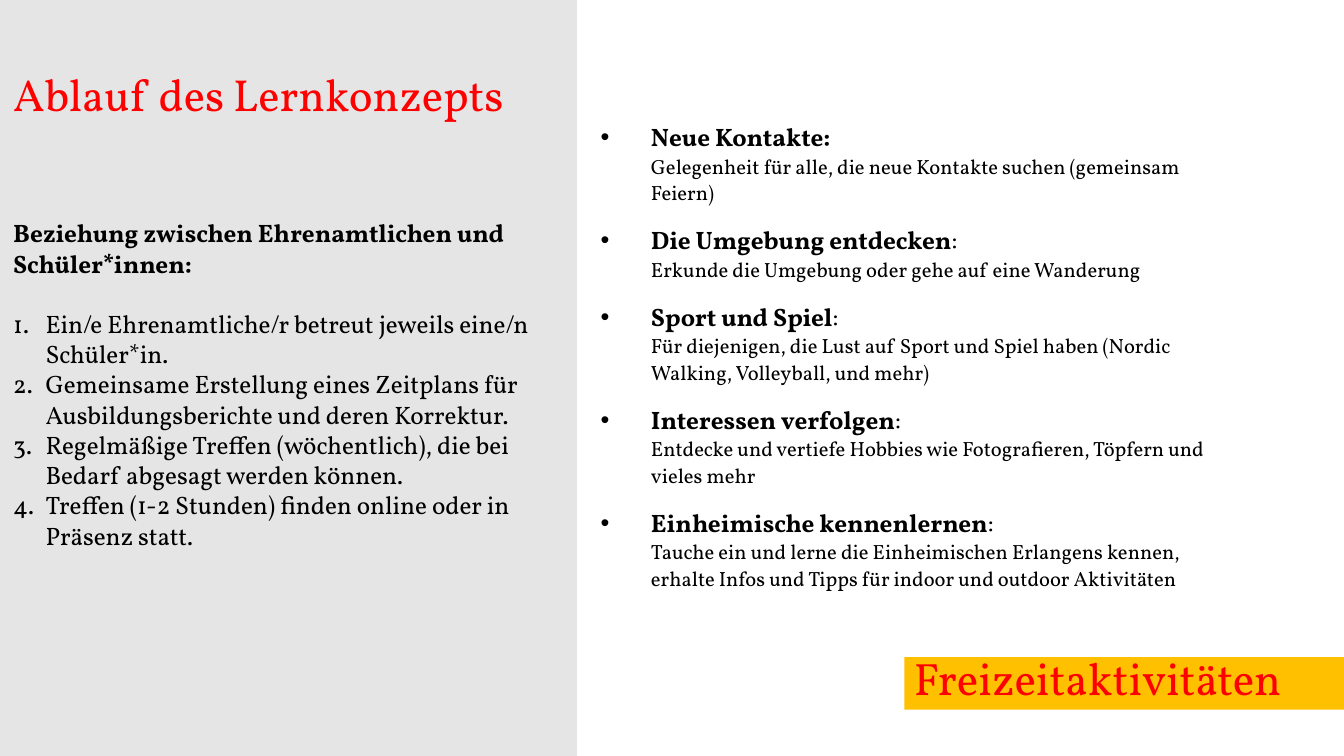
from lxml import etree
from pptx import Presentation
from pptx.dml.color import RGBColor
from pptx.enum.shapes import MSO_SHAPE as Shape
from pptx.enum.text import MSO_ANCHOR as Anchor, MSO_AUTO_SIZE as AutoSize, PP_ALIGN as Align
from pptx.oxml.ns import qn
from pptx.util import Inches, Pt

COLORS = {"panel": "E5E5E5", "banner": "FFC000", "heading": "FF0000", "body": "000000"}
FONT = "Vollkorn"
SLIDE_WIDTH = 10
SLIDE_HEIGHT = SLIDE_WIDTH * 9 / 16

CONCEPT_TITLE = "Ablauf des Lernkonzepts"
RELATION_TITLE = "Beziehung zwischen Ehrenamtlichen und Schüler*innen:"
RELATION_STEPS = [
    "Ein/e Ehrenamtliche/r betreut jeweils eine/n Schüler*in.",
    "Gemeinsame Erstellung eines Zeitplans für Ausbildungsberichte und deren Korrektur.",
    "Regelmäßige Treffen (wöchentlich), die bei Bedarf abgesagt werden können.",
    "Treffen (1-2 Stunden) finden online oder in Präsenz statt.",
]
LEISURE_TITLE = "Freizeitaktivitäten"
# bold heading, regular ending of the heading, description
ACTIVITIES = [
    ("Neue Kontakte:", "",
     "Gelegenheit für alle, die neue Kontakte suchen (gemeinsam Feiern)"),
    ("Die Umgebung entdecken", ":",
     "Erkunde die Umgebung oder gehe auf eine Wanderung"),
    ("Sport und Spiel", ":",
     "Für diejenigen, die Lust auf Sport und Spiel haben "
     "(Nordic Walking, Volleyball, und mehr)"),
    ("Interessen verfolgen", ":",
     "Entdecke und vertiefe Hobbies wie Fotografieren, Töpfern und vieles mehr"),
    ("Einheimische kennenlernen", ":",
     "Tauche ein und lerne die Einheimischen Erlangens kennen, "
     "erhalte Infos und Tipps für indoor und outdoor Aktivitäten"),
]


def color(name):
    return RGBColor.from_string(COLORS[name])


def set_frame(frame, **formats):
    settings = {"word_wrap": True, "vertical_anchor": Anchor.TOP, **formats}
    for key, value in settings.items():
        setattr(frame, key, value)
    return frame


def add_run(paragraph, text, size, bold=False, tone="body"):
    run = paragraph.add_run()
    run.text = text
    for key, value in {"name": FONT, "size": Pt(size), "bold": bold}.items():
        setattr(run.font, key, value)
    run.font.color.rgb = color(tone)


def add_paragraph(frame, first=False, **formats):
    paragraph = frame.paragraphs[0] if first else frame.add_paragraph()
    for key, value in {"alignment": Align.LEFT, **formats}.items():
        setattr(paragraph, key, value)
    return paragraph


def hang_marker(paragraph, indent, tag, **attributes):
    """Give the paragraph a hanging bullet or number."""
    properties = paragraph._p.get_or_add_pPr()
    properties.set("marL", str(Inches(indent)))
    properties.set("indent", str(-Inches(indent)))
    marker_font = "Arial" if tag == "a:buChar" else FONT
    etree.SubElement(properties, qn("a:buFont"), typeface=marker_font)
    etree.SubElement(properties, qn(tag), **attributes)


def add_block(slide, place, fill):
    block = slide.shapes.add_shape(Shape.RECTANGLE, *map(Inches, place))
    block.shadow.inherit = False
    block.fill.solid()
    block.fill.fore_color.rgb = color(fill)
    block.line.fill.background()
    return block


def add_relation_panel(slide):
    panel = add_block(slide, (0, 0, 4.29, SLIDE_HEIGHT), "panel")
    panel.line.color.rgb = color("panel")
    panel.line.width = Pt(0.75)
    frame = set_frame(panel.text_frame, margin_top=Inches(1.62))
    add_run(add_paragraph(frame, first=True, space_after=Pt(16.2)),
            RELATION_TITLE, 13.5, bold=True)
    for step in RELATION_STEPS:
        paragraph = add_paragraph(frame)
        hang_marker(paragraph, 0.24, "a:buAutoNum", type="arabicPeriod")
        add_run(paragraph, step, 13.5)


def add_concept_title(slide):
    box = slide.shapes.add_textbox(*map(Inches, (0, 0.45, 5.35, 0.71)))
    frame = set_frame(box.text_frame)
    add_run(add_paragraph(frame, first=True), CONCEPT_TITLE, 24, tone="heading")


def add_activities(slide):
    box = slide.shapes.add_textbox(*map(Inches, (4.37, 0.84, 5.01, 3.65)))
    frame = set_frame(box.text_frame, auto_size=AutoSize.SHAPE_TO_FIT_TEXT)
    for index, (heading, ending, description) in enumerate(ACTIVITIES):
        paragraph = add_paragraph(frame, first=index == 0,
                                  line_spacing=1.07, space_after=Pt(9.7))
        hang_marker(paragraph, 3 / 8, "a:buChar", char="•")
        add_run(paragraph, heading, 13.5, bold=True)
        if ending:
            add_run(paragraph, ending, 13.5)
        paragraph.add_line_break()
        add_run(paragraph, description, 11)


def add_leisure_banner(slide):
    banner = add_block(slide, (6.73, 4.89, 3.27, 0.39), "banner")
    frame = set_frame(banner.text_frame, vertical_anchor=Anchor.BOTTOM,
                      margin_left=Inches(0.07), margin_right=Inches(0.07),
                      margin_top=Inches(0.04), margin_bottom=Inches(0.04))
    add_run(add_paragraph(frame, first=True), LEISURE_TITLE, 24.3, tone="heading")


def main():
    deck = Presentation()
    deck.slide_width, deck.slide_height = Inches(SLIDE_WIDTH), Inches(SLIDE_HEIGHT)
    slide = deck.slides.add_slide(deck.slide_layouts[6])
    add_relation_panel(slide)
    add_concept_title(slide)
    add_activities(slide)
    add_leisure_banner(slide)
    deck.save("out.pptx")


if __name__ == "__main__":
    main()
